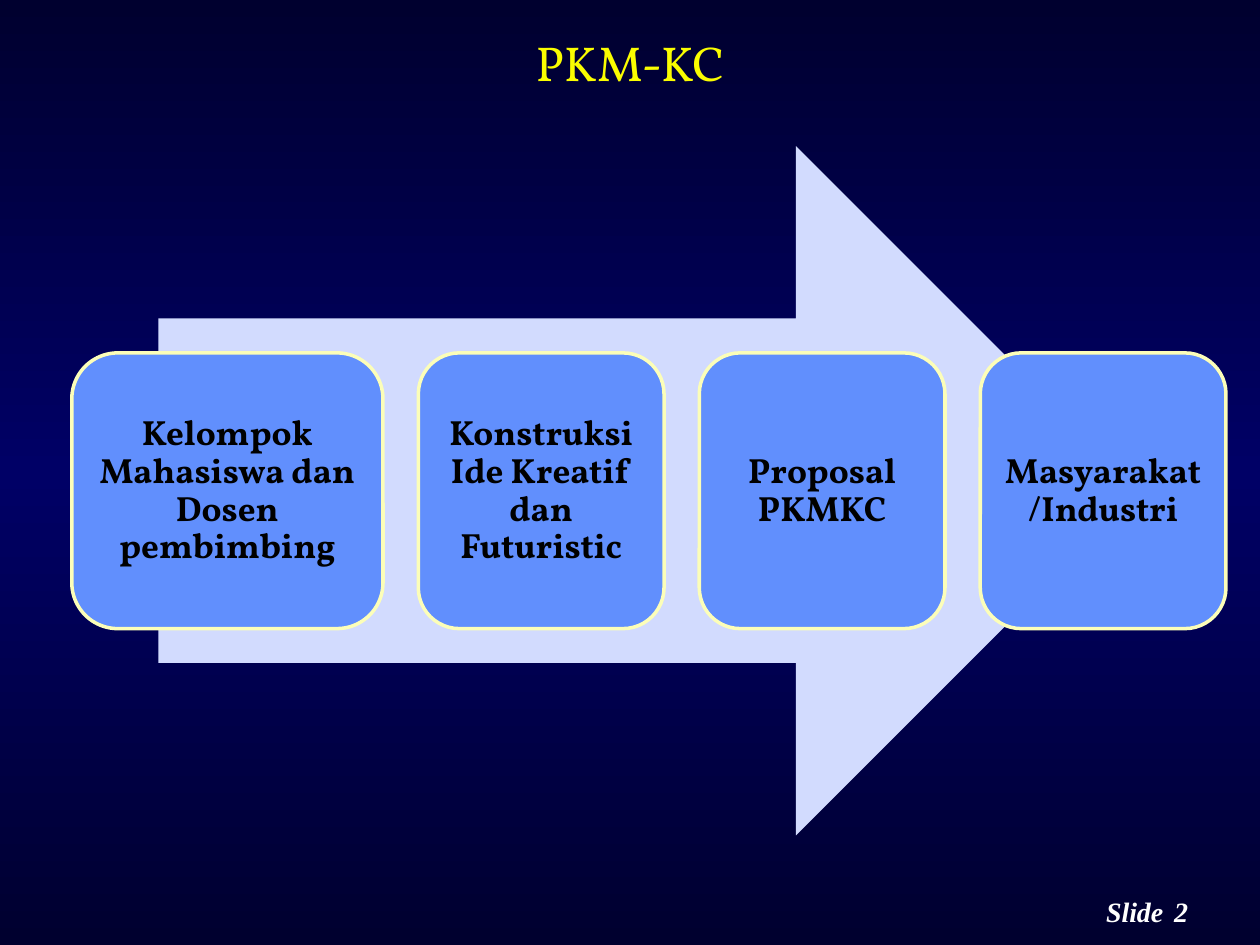
from lxml import etree
from pptx import Presentation
from pptx.dml.color import RGBColor
from pptx.enum.shapes import MSO_SHAPE as SHAPE
from pptx.enum.text import MSO_ANCHOR as ANCHOR, PP_ALIGN as ALIGN
from pptx.oxml.ns import qn
from pptx.util import Inches, Pt

FONT = "Vollkorn"
STEPS = [
    ("Kelompok Mahasiswa dan Dosen pembimbing", 2.47),
    ("Konstruksi Ide Kreatif dan Futuristic", 1.95),
    ("Proposal PKMKC", 1.95),
    ("Masyarakat/Industri", 1.95),
]


def rgb(value):
    return RGBColor.from_string(value)


def box(x, y, w, h):
    return [Inches(v) for v in (x, y, w, h)]


def style(p, size, color, name=FONT, bold=False, italic=False, align=ALIGN.CENTER):
    p.alignment = align
    for r in p.runs:
        f = r.font
        f.size, f.name, f.bold, f.italic = Pt(size), name, bold, italic
        f.color.rgb = rgb(color)


def set_background(s, stops):
    fill = s.background.fill
    fill.gradient()
    fill.gradient_angle = 90
    gs_list = s._element.find(".//" + qn("a:gsLst"))
    for gs in list(gs_list):
        gs_list.remove(gs)
    for pos, color in stops:
        gs = etree.SubElement(gs_list, qn("a:gs"), pos=str(pos * 1000))
        etree.SubElement(gs, qn("a:srgbClr"), val=color)


def add_title(s, text, x, y, w, h):
    sp = s.shapes.title
    sp.left, sp.top, sp.width, sp.height = box(x, y, w, h)
    tf = sp.text_frame
    tf.text = text
    tf.vertical_anchor = ANCHOR.MIDDLE
    style(tf.paragraphs[0], 28, "FAFD00")


def add_block(s, kind, bounds, color):
    sp = s.shapes.add_shape(kind, *bounds)
    sp.shadow.inherit = False
    sp.fill.solid()
    sp.fill.fore_color.rgb = rgb(color)
    sp.line.fill.background()
    return sp


def add_process(s, x, y, w, h, gap=0.28):
    # Arrow behind the steps, 85% of the width
    add_block(s, SHAPE.RIGHT_ARROW, box(x + w * 0.075, y, w * 0.85, h), "D2DBFE")

    # Steps, in the middle 40% of the height
    left = x
    for text, width in STEPS:
        sp = add_block(s, SHAPE.ROUNDED_RECTANGLE,
                       box(left, y + h * 0.3, width, h * 0.4), "618FFD")
        sp.line.color.rgb = rgb("FCFEB9")
        sp.line.width = Pt(2)
        tf = sp.text_frame
        tf.word_wrap = True
        tf.vertical_anchor = ANCHOR.MIDDLE
        tf.margin_left = tf.margin_right = Inches(0.08)
        tf.margin_top = tf.margin_bottom = Inches(0.08)
        tf.text = text
        p = tf.paragraphs[0]
        p.line_spacing = 0.9
        style(p, 20, "000000", bold=True)
        left += width + gap


def add_footer(s, x, y, w, h):
    # Label and slide number side by side
    label_w = 0.54
    for text, left, width in (("Slide", x, w - label_w + 0.2),
                              ("2", x + label_w, w - label_w)):
        tf = s.shapes.add_textbox(*box(left, y, width, h)).text_frame
        tf.text = text
        style(tf.paragraphs[0], 16, "FFFFFF", "Times New Roman",
              bold=True, italic=True, align=ALIGN.LEFT)


def main():
    prs = Presentation()
    prs.slide_width, prs.slide_height = Inches(10), Inches(7.5)
    s = prs.slides.add_slide(prs.slide_layouts[5])
    set_background(s, [(0, "00002F"), (50, "000066"), (100, "00002F")])
    add_title(s, "PKM-KC", 0.58, 0.05, 8.84, 0.89)
    add_process(s, 0.57, 1.16, 9.17, 5.47)
    add_footer(s, 8.68, 7.05, 1, 0.36)
    prs.save("out.pptx")


if __name__ == "__main__":
    main()
